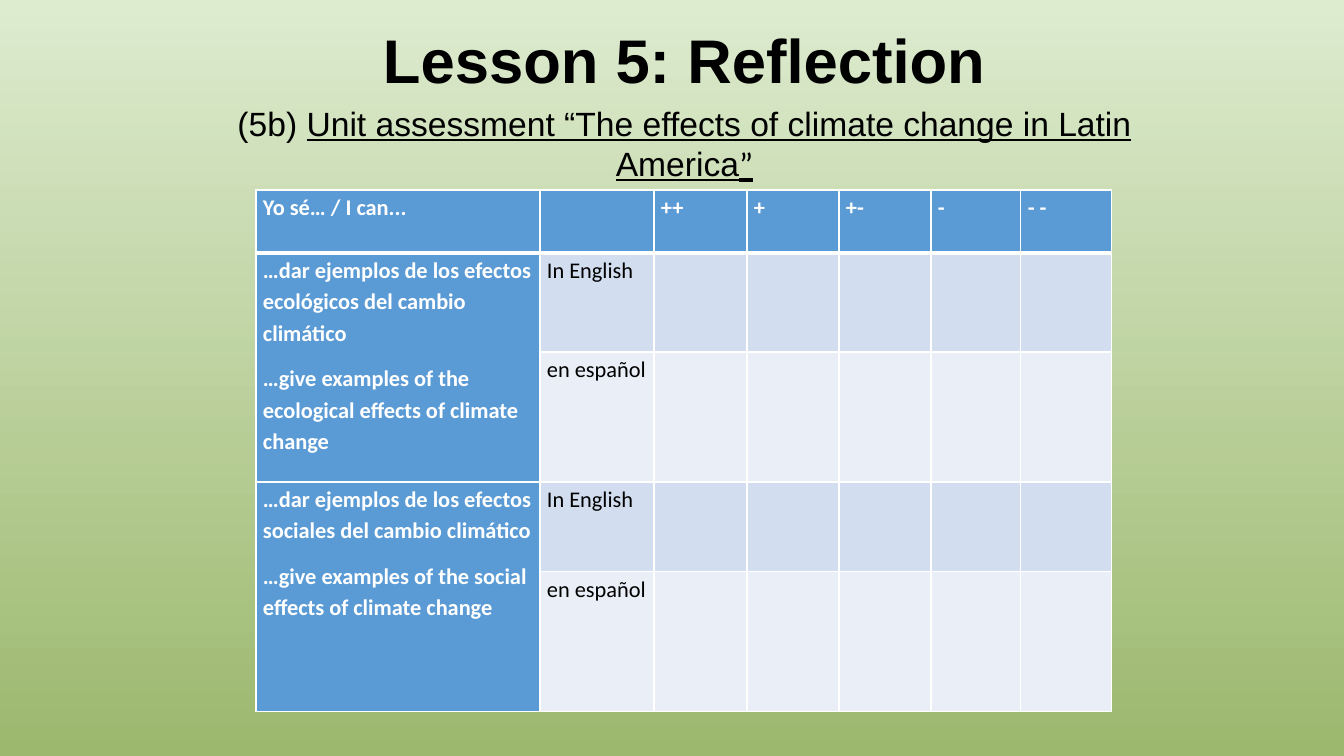
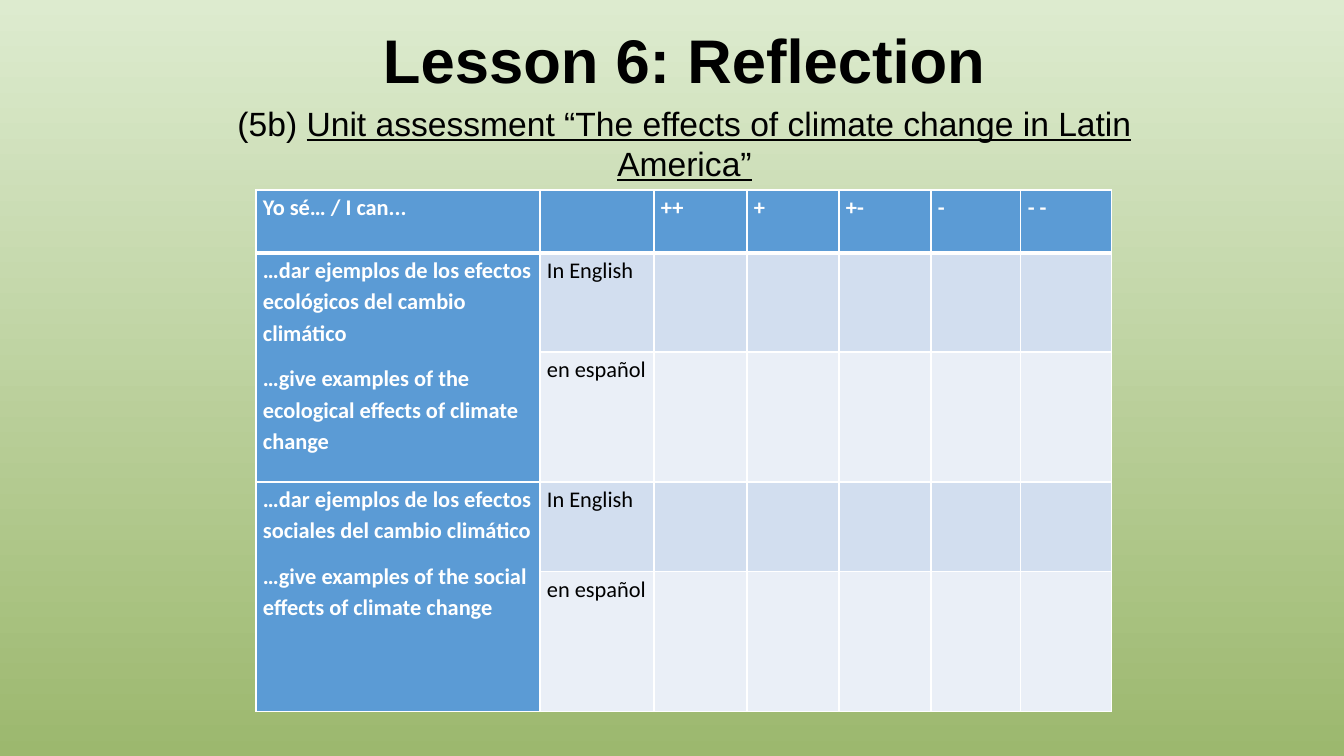
from dataclasses import dataclass

from lxml import etree
from pptx import Presentation
from pptx.dml.color import RGBColor
from pptx.enum import text
from pptx.oxml import ns
from pptx.util import Emu, Pt

QUESTION = "Unit assessment “The effects of climate change in Latin America"
LESSONS = [
    {"title": "Lesson 5: Reflection", "closing_font": "Calibri"},
    {"title": "Lesson 6: Reflection", "closing_font": "Arial"},
]
HEADINGS = ["Yo sé… / I can...", "", "++", "+", "+-", "-", "- -"]
GOALS = [
    ["…dar ejemplos de los efectos ecológicos del cambio climático",
     "…give examples of the ecological effects of climate change"],
    ["…dar ejemplos de los efectos sociales del cambio climático",
     "…give examples of the social effects of climate change"],
]
LANGUAGES = ["In English", "en español"]

SLIDE_SIZE = (1344, 756)
TITLE_BOX = (105, -9, 1159, 146)
SUBTITLE_BOX = (198, 98, 973, 90)
TABLE_ORIGIN = (256, 190)
COLUMN_WIDTHS = [284, 114, 93, 92, 92, 90, 91]
ROW_HEIGHTS = [63, 99, 130, 90, 140]
CELL_MARGIN = 7


@dataclass(frozen=True)
class Theme:
    sky: str = "DDEBCF"
    grass: str = "9CB86E"
    ink: str = "000000"
    white: str = "FFFFFF"
    header: str = "5B9BD5"
    bands: tuple = ("D2DEEF", "EAEFF7")
    heading_font: str = "Arial"
    table_font: str = "Calibri"
    title_size: int = 44
    subtitle_size: int = 24
    table_size: int = 16
    thin_line: int = 1
    thick_line: int = 3


THEME = Theme()


def px(value):
    return Emu(round(value * 914400 / 100.8))


def set_all(target, values):
    for name, value in values.items():
        setattr(target, name, value)


def place(shape, box):
    set_all(shape, dict(zip(("left", "top", "width", "height"), map(px, box))))


def add_run(paragraph, words, color, **font_values):
    run = paragraph.add_run()
    run.text = words
    set_all(run.font, font_values)
    run.font.color.rgb = RGBColor.from_string(color)


def paint_background(master):
    fill = master.background.fill
    fill.gradient()
    fill.gradient_angle = 270
    for stop, color in zip(fill.gradient_stops, (THEME.sky, THEME.grass)):
        stop.color.rgb = RGBColor.from_string(color)


def add_title(slide, words):
    title = slide.shapes.title
    place(title, TITLE_BOX)
    title.text_frame.vertical_anchor = text.MSO_ANCHOR.MIDDLE
    paragraph = title.text_frame.paragraphs[0]
    set_all(paragraph, {"alignment": text.PP_ALIGN.CENTER, "line_spacing": 0.9})
    add_run(paragraph, words, THEME.ink, name=THEME.heading_font,
            size=Pt(THEME.title_size), bold=True)


def add_subtitle(slide, closing_font):
    frame = slide.shapes.add_textbox(*map(px, SUBTITLE_BOX)).text_frame
    set_all(frame, {"word_wrap": True, "vertical_anchor": text.MSO_ANCHOR.MIDDLE})
    paragraph = frame.paragraphs[0]
    paragraph.alignment = text.PP_ALIGN.CENTER
    for words, font, underline in [
        ("(5b) ", THEME.heading_font, False),
        (QUESTION, THEME.heading_font, True),
        ("”", closing_font, True),
    ]:
        add_run(paragraph, words, THEME.ink, name=font,
                size=Pt(THEME.subtitle_size), underline=underline)


def set_borders(cell, top, bottom):
    properties = cell._tc.get_or_add_tcPr()
    widths = {"L": THEME.thin_line, "R": THEME.thin_line, "T": top, "B": bottom}
    for side, width in widths.items():
        line = etree.SubElement(properties, ns.qn(f"a:ln{side}"), w=str(Pt(width)))
        fill = etree.SubElement(line, ns.qn("a:solidFill"))
        etree.SubElement(fill, ns.qn("a:srgbClr"), val=THEME.white)


def format_cell(cell, row, column):
    thick, thin = THEME.thick_line, THEME.thin_line
    set_borders(cell, thick if row == 1 else thin, thick if row == 0 else thin)
    is_header = row == 0 or column == 0
    cell.fill.solid()
    cell.fill.fore_color.rgb = RGBColor.from_string(
        THEME.header if is_header else THEME.bands[(row - 1) % 2])
    margin = px(CELL_MARGIN)
    set_all(cell, {"margin_left": margin, "margin_right": margin,
                   "margin_top": 0, "margin_bottom": 0})


def write_cell(cell, lines, is_header):
    frame = cell.text_frame
    for index, words in enumerate(lines):
        paragraph = frame.add_paragraph() if index else frame.paragraphs[0]
        set_all(paragraph, {"line_spacing": 1.15, "space_after": Pt(10)})
        add_run(paragraph, words, THEME.white if is_header else THEME.ink,
                name=THEME.table_font, size=Pt(THEME.table_size), bold=is_header)


def add_reflection_table(slide):
    size = (sum(COLUMN_WIDTHS), sum(ROW_HEIGHTS))
    table = slide.shapes.add_table(len(ROW_HEIGHTS), len(COLUMN_WIDTHS),
                                   *map(px, TABLE_ORIGIN + size)).table
    set_all(table, {"first_row": False, "horz_banding": False})
    for column, width in zip(table.columns, COLUMN_WIDTHS):
        column.width = px(width)
    for row, height in zip(table.rows, ROW_HEIGHTS):
        row.height = px(height)
    for row in range(len(ROW_HEIGHTS)):
        for column in range(len(COLUMN_WIDTHS)):
            format_cell(table.cell(row, column), row, column)
    for column, heading in enumerate(HEADINGS):
        if heading:
            write_cell(table.cell(0, column), [heading], True)
    for index, goal in enumerate(GOALS):
        first = 1 + index * len(LANGUAGES)
        goal_cell = table.cell(first, 0)
        goal_cell.merge(table.cell(first + len(LANGUAGES) - 1, 0))
        write_cell(goal_cell, goal, True)
        for offset, language in enumerate(LANGUAGES):
            write_cell(table.cell(first + offset, 1), [language], False)


def main():
    presentation = Presentation()
    presentation.slide_width, presentation.slide_height = map(px, SLIDE_SIZE)
    paint_background(presentation.slide_master)
    layout = presentation.slide_layouts.get_by_name("Title Only")
    for lesson in LESSONS:
        slide = presentation.slides.add_slide(layout)
        add_title(slide, lesson["title"])
        add_reflection_table(slide)
        add_subtitle(slide, lesson["closing_font"])
    presentation.save("out.pptx")


if __name__ == "__main__":
    main()
